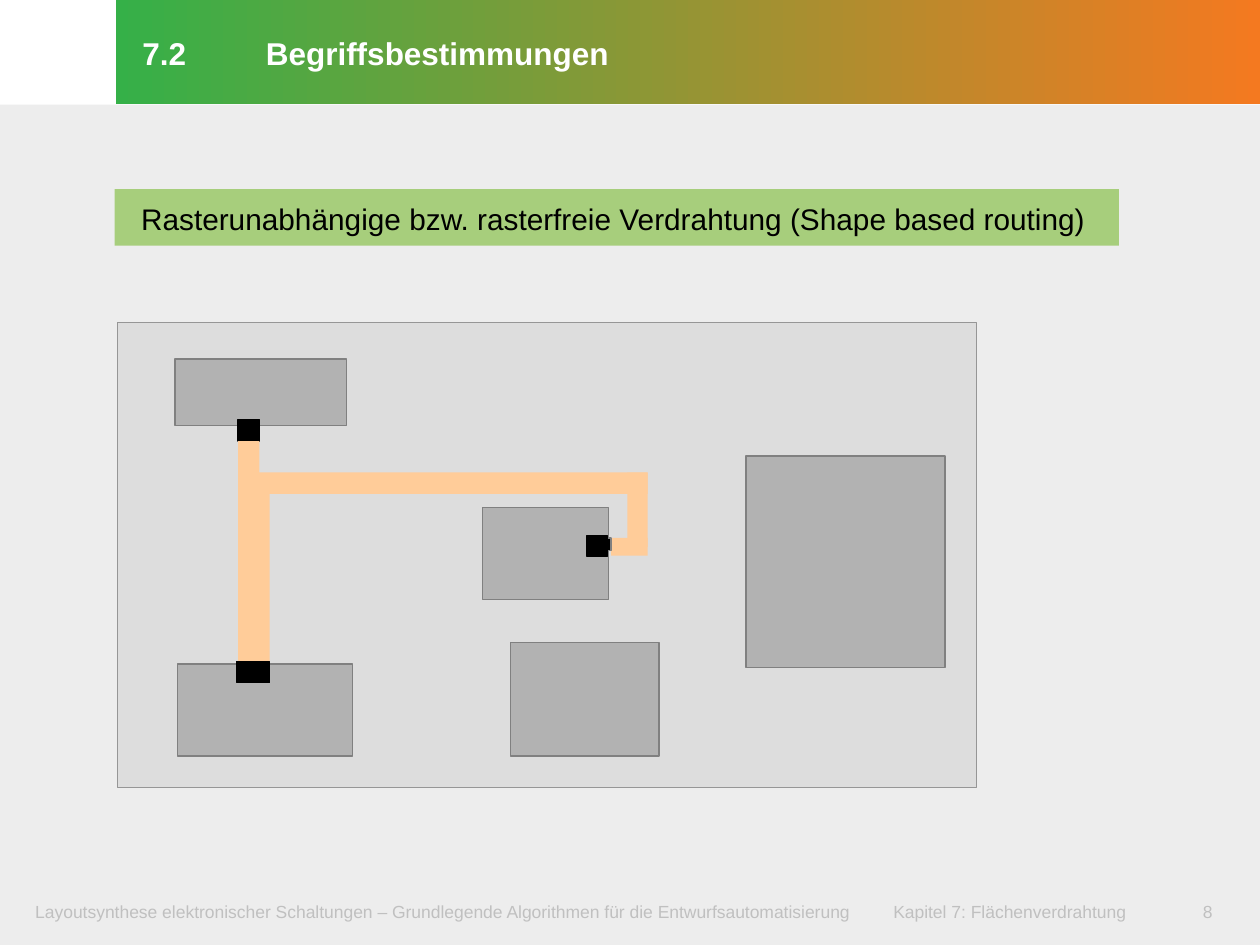
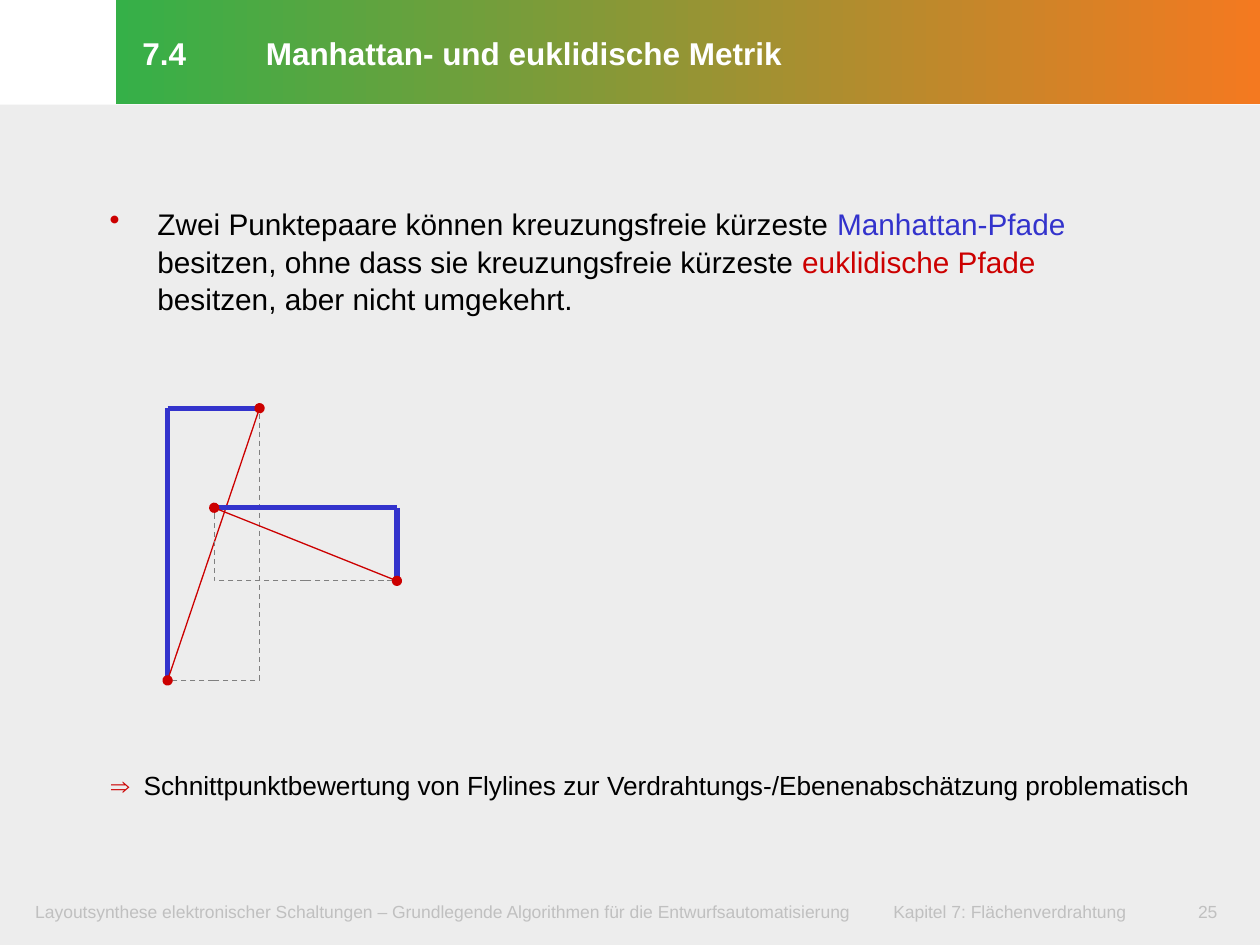
import dataclasses

import lxml.etree
import pptx
import pptx.dml.color
import pptx.enum.dml
import pptx.enum.shapes
import pptx.enum.text
import pptx.oxml.ns
import pptx.util

Inches = pptx.util.Inches
Pt = pptx.util.Pt
RECTANGLE = pptx.enum.shapes.MSO_SHAPE.RECTANGLE
ANCHOR = pptx.enum.text.MSO_ANCHOR
ALIGN = pptx.enum.text.PP_ALIGN


@dataclasses.dataclass(frozen=True)
class Theme:
    font: str = "Arial"
    title_size: float = 18
    body_size: float = 17
    note_size: float = 15
    footer_size: float = 10
    line_pitch: float = 23.5
    thin: float = 0.75
    thick: float = 3
    text: str = "000000"
    title_text: str = "FFFFFF"
    footer_text: str = "C0C0C0"
    background: str = "EDEDED"
    band_start: str = "35B048"
    band_end: str = "F47920"
    banner: str = "A7CE7C"
    board: str = "DDDDDD"
    board_edge: str = "969696"
    block: str = "B2B2B2"
    block_edge: str = "808080"
    wire: str = "FFCC99"
    pin: str = "000000"
    manhattan: str = "3333CC"
    euclidean: str = "CC0000"


THEME = Theme()
INSETS = (0.21, 0.05, 0.1, 0.07)
FOOTER_INSETS = (0.12, 0.06, 0.12, 0.06)
FOOTER = ("Layoutsynthese elektronischer Schaltungen – Grundlegende Algorithmen "
          "für die Entwurfsautomatisierung\tKapitel 7: Flächenverdrahtung")


def rgb(value):
    return pptx.dml.color.RGBColor.from_string(value)


def add_element(parent, tag, **attributes):
    element = lxml.etree.SubElement(parent, pptx.oxml.ns.qn(tag))
    for name, value in attributes.items():
        element.set(name, str(value))
    return element


def add_rectangle(page, place, fill=None, edge=None, dashed=False):
    shape = page.shapes.add_shape(RECTANGLE, *map(Inches, place))
    shape.shadow.inherit = False
    if fill:
        shape.fill.solid()
        shape.fill.fore_color.rgb = rgb(fill)
    else:
        shape.fill.background()
    if edge:
        shape.line.color.rgb = rgb(edge)
        shape.line.width = Pt(THEME.thin)
        if dashed:
            shape.line.dash_style = pptx.enum.dml.MSO_LINE.DASH
    else:
        shape.line.fill.background()
    return shape


def add_line(page, start, end, color, width, dots=False):
    """Draw a straight line, with round dots at both ends if wanted."""
    line = page.shapes.add_connector(
        pptx.enum.shapes.MSO_CONNECTOR.STRAIGHT, *map(Inches, start + end))
    line.line.color.rgb = rgb(color)
    line.line.width = Pt(width)
    if dots:
        outline = line.line._get_or_add_ln()
        for tag in ("a:headEnd", "a:tailEnd"):
            add_element(outline, tag, type="oval")
    add_element(line._element.spPr, "a:effectLst")


def write(shape, spans, size, color=THEME.text, bold=False, align=ALIGN.LEFT,
          anchor=ANCHOR.TOP, insets=INSETS, spacing=None, tab=None, bullet=None):
    """Fill a shape with one paragraph of (text, colour or None) spans."""
    frame = shape.text_frame
    frame.word_wrap = True
    frame.vertical_anchor = anchor
    (frame.margin_left, frame.margin_top,
     frame.margin_right, frame.margin_bottom) = map(Inches, insets)
    para = frame.paragraphs[0]
    properties = para._p.get_or_add_pPr()
    if bullet:
        indent = Inches(0.38)
        properties.set("marL", str(indent))
        properties.set("indent", str(-indent))
        bullet_color = add_element(properties, "a:buClr")
        add_element(bullet_color, "a:srgbClr", val=THEME.euclidean)
        add_element(properties, "a:buChar", char=bullet)
    if tab:
        tabs = add_element(properties, "a:tabLst")
        add_element(tabs, "a:tab", pos=Inches(tab), algn="l")
    para.alignment = align
    if spacing:
        para.line_spacing = spacing
    para.font.name = THEME.font
    para.font.size = Pt(size)
    para.font.bold = bold
    para.font.color.rgb = rgb(color)
    for text, span_color in spans:
        span = para.add_run()
        span.text = text
        if span_color:
            span.font.color.rgb = rgb(span_color)


def add_text(page, place, spans, size, **style):
    write(page.shapes.add_textbox(*map(Inches, place)), spans, size, **style)


def add_title(page, number, title):
    band = add_rectangle(page, (0.92, 0, 9.08, 0.83))
    band.fill.gradient()
    band.fill.gradient_angle = 0
    stops = zip(band.fill.gradient_stops, (THEME.band_start, THEME.band_end))
    for position, (stop, color) in enumerate(stops):
        stop.position = position
        stop.color.rgb = rgb(color)
    write(band, [(f"{number}\t{title}", None)], THEME.title_size,
          color=THEME.title_text, bold=True, anchor=ANCHOR.MIDDLE,
          spacing=Pt(THEME.line_pitch), tab=0.98)


def add_page(deck, section, title, page_number):
    """Add a page with the shared background, footer and title band."""
    page = deck.slides.add_slide(deck.slide_layouts[6])
    add_rectangle(page, (0, 0.83, 10, 6.67), THEME.background)
    footer_style = dict(color=THEME.footer_text, insets=FOOTER_INSETS)
    add_text(page, (0.16, 7.09, 9.17, 0.32), [(FOOTER, None)],
             THEME.footer_size, tab=6.81, **footer_style)
    add_text(page, (9.29, 7.09, 0.59, 0.32), [(str(page_number), None)],
             THEME.footer_size, align=ALIGN.CENTER, **footer_style)
    add_title(page, section, title)
    return page


def add_shape_based_routing(page):
    banner = add_rectangle(page, (0.91, 1.5, 7.97, 0.45), THEME.banner)
    write(banner, [("Rasterunabhängige bzw. rasterfreie Verdrahtung "
                    "(Shape based routing)", None)],
          THEME.body_size, spacing=Pt(THEME.line_pitch))
    add_rectangle(page, (0.93, 2.56, 6.82, 3.69), THEME.board, THEME.board_edge)

    blocks = [(1.39, 2.85, 1.36, 0.53), (1.41, 5.27, 1.39, 0.73),
              (4.05, 5.1, 1.18, 0.9), (3.83, 4.03, 1, 0.73),
              (5.92, 3.62, 1.58, 1.68)]
    trunk_and_stub = [(1.89, 3.92, 0.25, 1.35), (4.85, 4.27, 0.29, 0.14)]
    contacts = [(1.89, 5.27, 0.14, 0.11), (4.72, 4.27, 0.13, 0.1)]
    pins = [(1.88, 5.25, 0.26, 0.17), (4.66, 4.25, 0.16, 0.17),
            (1.89, 3.33, 0.17, 0.17)]
    branches = [(1.89, 3.75, 3.25, 0.17), (4.98, 3.75, 0.16, 0.59),
                (1.89, 3.5, 0.17, 0.59)]
    layers = [(blocks, THEME.block, THEME.block_edge),
              (trunk_and_stub, THEME.wire, None),
              (contacts, THEME.pin, THEME.block_edge),
              (pins, THEME.pin, THEME.pin),
              (branches, THEME.wire, None)]
    for places, fill, edge in layers:
        for place in places:
            add_rectangle(page, place, fill, edge)


def add_point_pair(page, start, corner, end):
    """Join two points by a Manhattan path around a corner and by a flyline."""
    left, right = sorted((start[0], end[0]))
    top, bottom = sorted((start[1], end[1]))
    add_rectangle(page, (left, top, right - left, bottom - top),
                  edge=THEME.block_edge, dashed=True)
    for point in (start, end):
        add_line(page, corner, point, THEME.manhattan, THEME.thick)
    add_line(page, start, end, THEME.euclidean, THEME.thin, dots=True)


def add_metric_comparison(page):
    statement = [
        ("Zwei Punktepaare können kreuzungsfreie kürzeste ", None),
        ("Manhattan-Pfade", THEME.manhattan),
        (" besitzen, ohne dass sie kreuzungsfreie kürzeste ", None),
        ("euklidische Pfade", THEME.euclidean),
        (" besitzen, aber nicht umgekehrt.", None)]
    add_text(page, (0.66, 1.57, 8.53, 4.85), statement, THEME.body_size,
             spacing=1.05, bullet="•")
    add_point_pair(page, (2.06, 3.24), (1.33, 3.24), (1.33, 5.4))
    add_point_pair(page, (1.7, 4.03), (3.15, 4.03), (3.15, 4.61))
    conclusion = [
        ("⇒\t", THEME.euclidean),
        ("Schnittpunktbewertung von Flylines zur "
         "Verdrahtungs-/Ebenenabschätzung problematisch", None)]
    add_text(page, (0.67, 5.98, 9.02, 0.45), conclusion, THEME.note_size,
             spacing=Pt(THEME.line_pitch), tab=0.26)


def main():
    deck = pptx.Presentation()
    deck.slide_width, deck.slide_height = Inches(10), Inches(7.5)
    add_shape_based_routing(add_page(deck, "7.2", "Begriffsbestimmungen", 8))
    add_metric_comparison(
        add_page(deck, "7.4", "Manhattan- und euklidische Metrik", 25))
    deck.save("out.pptx")


if __name__ == "__main__":
    main()
